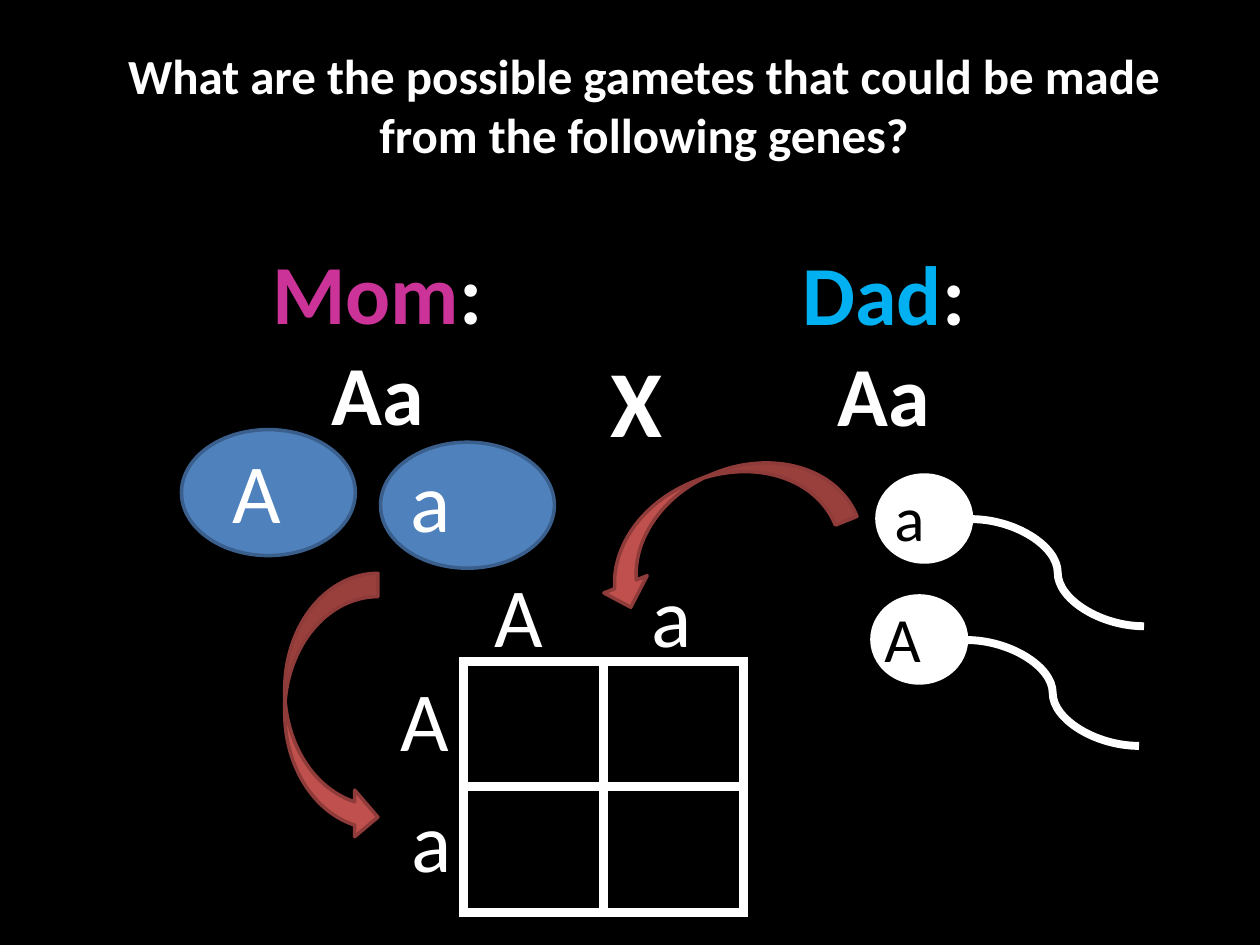
import pptx
import pptx.util
import pptx.dml.color
import pptx.enum.shapes
import pptx.enum.text
import pptx.oxml

SCALE = 9144
COLORS = {
    "black": "000000", "white": "FFFFFF", "pink": "CC3399", "sky": "00B0F0",
    "egg": "4F81BD", "egg_edge": "3A5F8C", "arrow": "C0504D", "arrow_edge": "8E3B39",
}
SHAPES = pptx.enum.shapes.MSO_SHAPE
LETTER_SIZE = (135, 91)


def emu(*lengths):
    return [length * SCALE for length in lengths]


def rgb(name):
    return pptx.dml.color.RGBColor.from_string(COLORS[name])


def apply_format(target, values):
    for name, value in values.items():
        setattr(target, name, value)


def add_text(page, box, lines, size, bold=False, align="LEFT"):
    frame = page.shapes.add_textbox(*emu(*box)).text_frame
    apply_format(frame, {"word_wrap": True,
                         "auto_size": pptx.enum.text.MSO_AUTO_SIZE.SHAPE_TO_FIT_TEXT})
    for index, line in enumerate(lines):
        para = frame.add_paragraph() if index else frame.paragraphs[0]
        para.alignment = getattr(pptx.enum.text.PP_ALIGN, align)
        for text, color in line:
            span = para.add_run()
            span.text = text
            apply_format(span.font, {"name": "Calibri", "size": pptx.util.Pt(size), "bold": bold})
            span.font.color.rgb = rgb(color)


def add_letter(page, left, top, letter):
    add_text(page, (left, top, *LETTER_SIZE), [[(letter, "white")]], 48)


def add_filled(page, kind, box, fill, edge, rotation=0):
    shape = page.shapes.add_shape(kind, *emu(*box))
    shape.fill.solid()
    shape.fill.fore_color.rgb = rgb(fill)
    shape.line.color.rgb = rgb(edge)
    shape.line.width = pptx.util.Pt(2)
    shape.rotation = rotation
    shape.shadow.inherit = False


def add_parent(page, box, name, color):
    lines = [[(name, color), (":", "white")], [("Aa", "white")]]
    add_text(page, box, lines, 48, True, "CENTER")


def add_egg(page, box, letter, indent, drop):
    add_filled(page, SHAPES.OVAL, box, "egg", "egg_edge")
    add_letter(page, box[0] + indent, box[1] + drop, letter)


def add_sperm(page, box, letter, indent):
    left, top, width, height = box
    head_width, head_height = 75, 69
    add_filled(page, SHAPES.OVAL, (left, top, head_width, head_height), "white", "white")
    tail = page.shapes.add_connector(
        pptx.enum.shapes.MSO_CONNECTOR.CURVE,
        *emu(left + head_width, top + head_height // 2 + 1, left + width, top + height))
    tail.line.color.rgb = rgb("white")
    tail.line.width = pptx.util.Pt(4.5)
    tail._element.spPr.append(pptx.oxml.parse_xml(
        '<a:effectLst xmlns:a="http://schemas.openxmlformats.org/drawingml/2006/main"/>'))
    add_text(page, (left + indent, top - 2, 135, 71), [[(letter, "black")]], 36)


def border_cell(cell):
    properties = cell._tc.get_or_add_tcPr()
    for index, side in enumerate(("lnL", "lnR", "lnT", "lnB")):
        properties.insert(index, pptx.oxml.parse_xml(
            f'<a:{side} xmlns:a="http://schemas.openxmlformats.org/drawingml/2006/main" '
            f'w="{pptx.util.Pt(6)}"><a:solidFill><a:srgbClr val="{COLORS["white"]}"/>'
            f'</a:solidFill></a:{side}>'))


def add_punnett_square(page, box):
    left, top, width, height = box
    table = page.shapes.add_table(2, 2, *emu(*box)).table
    apply_format(table, {"first_row": False, "horz_banding": False})
    for cell in table.iter_cells():
        cell.fill.solid()
        cell.fill.fore_color.rgb = rgb("black")
        border_cell(cell)
    for letter, column_left, row_left, row_top in (("A", 15, -60, 0), ("a", 139, -51, 96)):
        add_letter(page, left + column_left, top - 83, letter)
        add_letter(page, left + row_left, top + row_top, letter)


def add_arrow(page, box, rotation):
    add_filled(page, SHAPES.CURVED_RIGHT_ARROW, box, "arrow", "arrow_edge", rotation)


def main():
    deck = pptx.Presentation()
    width, height = emu(1000, 750)
    apply_format(deck, {"slide_width": width, "slide_height": height})
    page = deck.slides.add_slide(deck.slide_layouts[6])
    page.background.fill.solid()
    page.background.fill.fore_color.rgb = rgb("black")

    question = "What are the possible gametes that could be made from the following genes?"
    add_text(page, (88, 31, 846, 105), [[(question, "white")]], 28, True, "CENTER")
    add_parent(page, (175, 186, 249, 172), "Mom", "pink")
    add_parent(page, (577, 187, 249, 172), "Dad", "sky")
    add_text(page, (475, 267, 42, 101), [[("X", "white")]], 54, True)
    add_egg(page, (144, 341, 138, 100), "A", 31, 3)
    add_egg(page, (302, 351, 138, 100), "a", 14, 0)
    add_sperm(page, (696, 377, 212, 120), "a", 4)
    add_sperm(page, (692, 473, 212, 119), "A", 0)
    add_punnett_square(page, (368, 525, 222, 199))
    add_arrow(page, (226, 455, 74, 212), 0)
    add_arrow(page, (531, 309, 74, 212), 68.1)
    deck.save("out.pptx")


if __name__ == "__main__":
    main()
